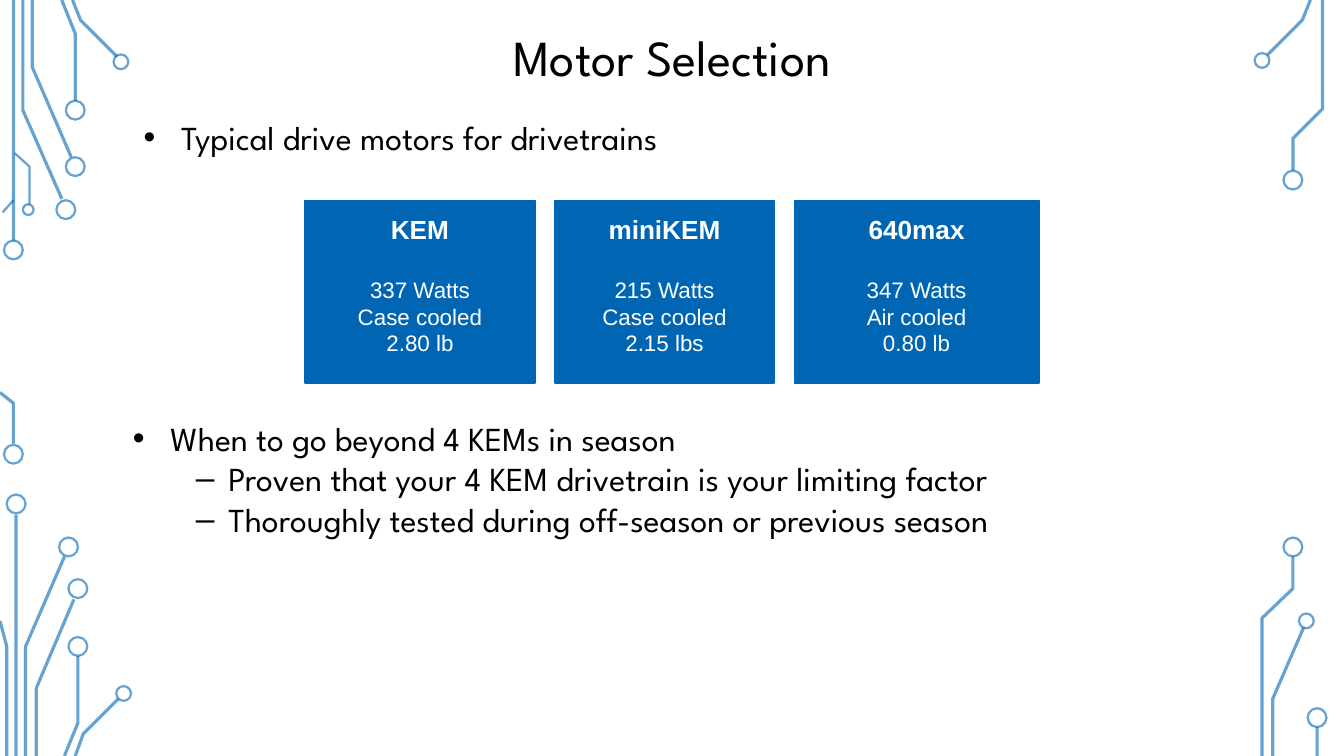
from lxml.etree import SubElement
from pptx import Presentation
from pptx.dml.color import RGBColor
from pptx.enum.shapes import MSO_CONNECTOR, MSO_SHAPE
from pptx.enum.text import MSO_ANCHOR, PP_ALIGN
from pptx.oxml.ns import qn
from pptx.util import Inches, Pt

# Content
TITLE = "Motor Selection"
INTRO = [(0, "Typical drive motors for drivetrains")]
ADVICE = [
    (0, "When to go beyond 4 KEMs in season"),
    (1, "Proven that your 4 KEM drivetrain is your limiting factor"),
    (1, "Thoroughly tested during off-season or previous season"),
]
# Name, facts, width in columns
MOTORS = [
    ("KEM", ["337 Watts", "Case cooled", "2.80 lb"], 171),
    ("miniKEM", ["215 Watts", "Case cooled", "2.15 lbs"], 163),
    ("640max", ["347 Watts", "Air cooled", "0.80 lb"], 182),
]

# Grid: 1000 columns on a 16:9 slide
COLS = 1000
ROWS = COLS * 9 / 16
CELL = Inches(0.01)
COLORS = {"blue": "0066B3", "black": "000000", "white": "FFFFFF"}
HEAD, BODY = "League Spartan", "Arial"
LEFT, TOP, TALL, GAP = 227, 149, 136, 15

# Circuit traces: corner points in cells
TRACES = [
    [(10, 0), (10, 179)],
    [(17, 0), (17, 82), (46, 148)],
    [(24, 0), (24, 50), (53, 117)],
    [(46, 0), (56, 25), (56, 75)],
    [(54, 0), (60, 15), (87, 42)],
    [(0, 292), (10, 300), (10, 330)],
    [(12, 383), (12, ROWS)],
    [(48, 414), (19, 481), (19, ROWS)],
    [(0, 462), (5, 481), (5, ROWS)],
    [(55, 446), (27, 512), (27, ROWS)],
    [(58, 488), (58, 538), (48, ROWS)],
    [(88, 520), (62, 546), (56, ROWS)],
    [(943, 41), (969, 15), (975, 0)],
    [(962, 127), (962, 103), (984, 81), (984, 0)],
    [(970, 467), (947, 520), (947, ROWS)],
    [(962, 414), (962, 438), (939, 460), (939, ROWS)],
    [(980, 541), (980, ROWS)],
]
THIN = [
    [(2, 158), (10, 149)],
    [(11, 114), (22, 124), (22, 152)],
]
# Circuit pads: centres in cells, by diameter
PADS = {
    14: [(10, 186), (10, 338), (49, 156), (56, 124), (56, 82), (12, 375),
         (51, 407), (58, 438), (58, 481), (962, 134), (962, 407), (980, 534)],
    11: [(90, 46), (92, 516), (939, 45), (972, 462)],
    8: [(21, 156)],
}


def cells(*nums):
    return [int(n * CELL) for n in nums]


deck = Presentation()
deck.slide_width, deck.slide_height = cells(COLS, ROWS)
page = deck.slides.add_slide(deck.slide_layouts[6])
shapes = page.shapes


def tint(name):
    return RGBColor.from_string(COLORS[name])


def stroke(shape, width):
    """Give a shape a see-through blue line."""
    shape.line.color.rgb = tint("blue")
    shape.line.width = Pt(width)
    color = shape.line.fill._xPr.find(".//" + qn("a:srgbClr"))
    SubElement(color, qn("a:alpha")).set("val", "60000")


def trace(points, width):
    if len(points) == 2:
        line = shapes.add_connector(
            MSO_CONNECTOR.STRAIGHT, *cells(*points[0], *points[1]))
        SubElement(line._element.spPr, qn("a:effectLst"))
    else:
        spots = [tuple(cells(*p)) for p in points]
        route = shapes.build_freeform(*spots[0], scale=1.0)
        route.add_line_segments(spots[1:], close=False)
        line = route.convert_to_shape()
        line.fill.background()
        line.shadow.inherit = False
    stroke(line, width)


def pad(x, y, size):
    ring = shapes.add_shape(
        MSO_SHAPE.OVAL, *cells(x - size / 2, y - size / 2, size, size))
    ring.fill.background()
    ring.shadow.inherit = False
    stroke(ring, 1.2)


def frame(shape, inset, anchor=MSO_ANCHOR.TOP):
    """Set up a text frame; inset is (sides, top and bottom) in cells."""
    text = shape.text_frame
    text.word_wrap = True
    text.vertical_anchor = anchor
    text.margin_left = text.margin_right = cells(inset[0])[0]
    text.margin_top = text.margin_bottom = cells(inset[1])[0]
    return text


def write(box, text, size=18, font=HEAD, color="black", bold=False,
          align=PP_ALIGN.LEFT, before=0, space=None, level=None):
    """Add one paragraph; a level makes it a bullet."""
    para = box.paragraphs[0]
    if para.runs:
        para = box.add_paragraph()
    para.alignment, para.space_before = align, Pt(before)
    if space:
        para.line_spacing = space
    if level is not None:
        para.level = level
        mark, left, hang = [("•", 38, -28), ("–", 81, -24)][level]
        props = para._p.get_or_add_pPr()
        props.set("marL", str(cells(left)[0]))
        props.set("indent", str(cells(hang)[0]))
        SubElement(props, qn("a:buFont")).set("typeface", BODY)
        SubElement(props, qn("a:buChar")).set("char", mark)
    run = para.add_run()
    run.text = text
    run.font.size, run.font.name, run.font.bold = Pt(size), font, bold
    run.font.color.rgb = tint(color)


# Circuit border
for points in TRACES:
    trace(points, 1.7)
for points in THIN:
    trace(points, 1.2)
for size, spots in PADS.items():
    for x, y in spots:
        pad(x, y, size)

# Title
box = frame(shapes.add_textbox(*cells(94, -16, 812, 121)), (7, 4),
            MSO_ANCHOR.MIDDLE)
write(box, TITLE, size=27, align=PP_ALIGN.CENTER, space=0.9)

# Bullet lists
for x, y, items in [(87, 82, INTRO), (79, 306, ADVICE)]:
    box = frame(shapes.add_textbox(*cells(x, y, 841, TALL)), (10, 5))
    for level, text in items:
        write(box, text, level=level)

# Motor cards
x = LEFT
for name, facts, wide in MOTORS:
    card = shapes.add_shape(MSO_SHAPE.RECTANGLE, *cells(x, TOP, wide, TALL))
    card.shadow.inherit = False
    card.fill.solid()
    card.fill.fore_color.rgb = card.line.color.rgb = tint("blue")
    card.line.width = Pt(0.75)
    box = frame(card, (10, 10))
    look = {"font": BODY, "color": "white", "align": PP_ALIGN.CENTER}
    write(box, name, size=14, bold=True, **look)
    for i, fact in enumerate(facts):
        write(box, fact, size=12, before=0 if i else 16.5, **look)
    x += wide + GAP

deck.save("out.pptx")
